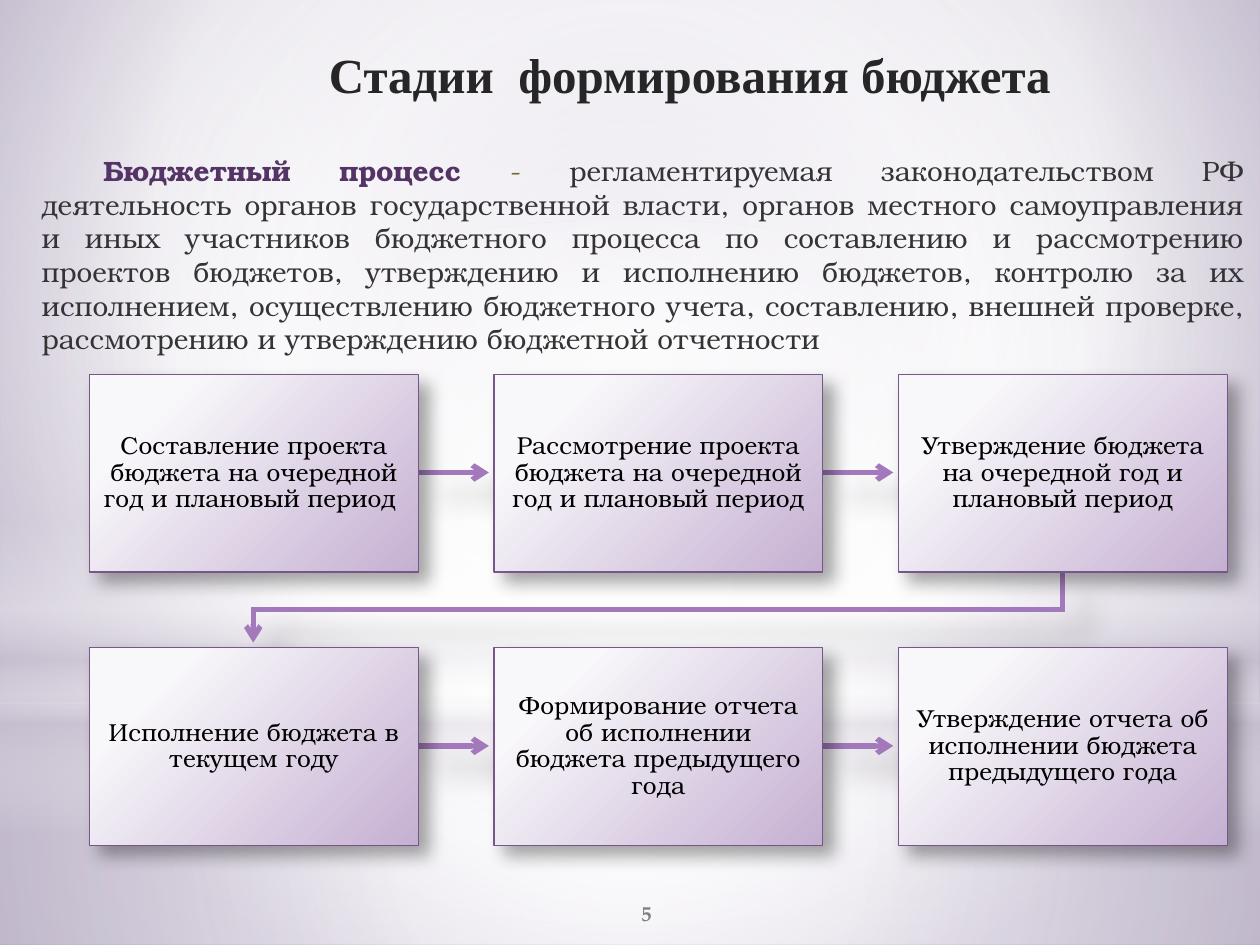
from dataclasses import dataclass

from lxml import etree
from pptx import Presentation
from pptx import util as u
from pptx.dml.color import RGBColor
from pptx.enum import shapes, text
from pptx.oxml import parse_xml
from pptx.oxml.ns import nsdecls, qn

PX = 914400 // 100  # 100 px to the inch
COLORS = {
    "title": "262626", "term": "543466", "dash": "756525", "body": "343436",
    "step": "000000", "number": "808080", "arrow": "A379BB", "border": "77568A",
    "shadow": "000000", "white": "FFFFFF", "mist": "C9C2D1",
    "edge": "C1B7CD", "depth": "A191B5", "light": "F8F7FA", "lilac": "C5B0D2",
}
SERIF, BOOK, NUMBER = "Times New Roman", "TeX Gyre Bonum", "TeX Gyre Pagella"
CENTER = (50, 50, 50, 50)


@dataclass
class Box:
    left: int
    top: int
    width: int
    height: int

    def emu(self) -> list[int]:
        return [px(n) for n in (self.left, self.top, self.width, self.height)]


@dataclass
class Gradient:
    stops: list  # (position %, colour name, opacity %)
    focus: tuple | None = None  # circular when given, otherwise top to bottom


@dataclass
class Shadow:
    opacity: int
    blur: float
    distance: float


@dataclass
class Layer:
    preset: shapes.MSO_SHAPE
    box: Box
    gradient: Gradient


RECT, OVAL = shapes.MSO_SHAPE.RECTANGLE, shapes.MSO_SHAPE.OVAL
BACKGROUND = Gradient([(0, "edge", 100), (60, "white", 100), (100, "depth", 100)],
                      (20, 10, 20, 60))
LAYERS = [
    Layer(RECT, Box(0, 558, 1000, 192), Gradient(
        [(0, "white", 91), (37, "white", 76), (100, "mist", 79)], CENTER)),
    Layer(RECT, Box(0, 0, 1000, 558), Gradient(
        [(0, "white", 89), (48, "white", 62), (100, "mist", 79)], CENTER)),
    Layer(RECT, Box(0, 412, 1000, 250), Gradient(
        [(0, "white", 0), (29, "white", 30), (45, "mist", 40),
         (55, "white", 26), (65, "mist", 60), (100, "white", 0)])),
    Layer(OVAL, Box(0, 175, 1000, 558), Gradient(
        [(0, "white", 100), (56, "white", 0)], CENTER)),
]
STEP_GRADIENT = Gradient([(20, "light", 100), (100, "lilac", 100)], (-15, -15, 115, 115))
STEP_SHADOW, ARROW_SHADOW = Shadow(35, 10.2, 8), Shadow(26, 15, 18)
STEPS = [
    "Составление проекта бюджета на очередной год и плановый период ",
    "Рассмотрение проекта бюджета на очередной год и плановый период",
    "Утверждение бюджета на очередной год и плановый период",
    "Исполнение бюджета в текущем году",
    "Формирование отчета об исполнении бюджета предыдущего года",
    "Утверждение отчета об исполнении бюджета предыдущего года",
]
COLUMNS, GAP = 3, 60
STEP = Box(71, 297, 261, 157)
DEFINITION = [
    ("Бюджетный процесс ", "term", True),
    ("- ", "dash", False),
    ("регламентируемая законодательством РФ деятельность органов государственной "
     "власти, органов местного самоуправления и иных участников бюджетного процесса "
     "по составлению и рассмотрению проектов бюджетов, утверждению и исполнению "
     "бюджетов, контролю за их исполнением, осуществлению бюджетного учета, "
     "составлению, внешней проверке, рассмотрению и утверждению бюджетной отчетности",
     "body", False),
]


def px(length: int) -> int:
    return length * PX


def rgb(name: str) -> RGBColor:
    return RGBColor.from_string(COLORS[name])


def set_gradient(fill, element, gradient: Gradient) -> None:
    stops = "".join(
        f'<a:gs pos="{position * 1000}"><a:srgbClr val="{COLORS[color]}">'
        f'<a:alpha val="{opacity * 1000}"/></a:srgbClr></a:gs>'
        for position, color, opacity in gradient.stops)
    direction = '<a:lin ang="5400000" scaled="0"/>'
    if gradient.focus:
        sides = " ".join(f'{side}="{n * 1000}"' for side, n in zip("ltrb", gradient.focus))
        direction = f'<a:path path="circle"><a:fillToRect {sides}/></a:path>'
    fill.solid()
    solid = next(element.iter(qn("a:solidFill")))
    solid.getparent().replace(solid, parse_xml(
        f'<a:gradFill {nsdecls("a")} rotWithShape="1"><a:gsLst>{stops}</a:gsLst>'
        f'{direction}</a:gradFill>'))


def set_shadow(shape, shadow: Shadow) -> None:
    properties = shape.element.spPr
    effects = properties.find(qn("a:effectLst"))
    if effects is None:
        effects = etree.SubElement(properties, qn("a:effectLst"))
    effects.append(parse_xml(
        f'<a:outerShdw {nsdecls("a")} blurRad="{u.Pt(shadow.blur)}" '
        f'dist="{u.Pt(shadow.distance)}" dir="2700000" algn="tl" rotWithShape="0">'
        f'<a:srgbClr val="{COLORS["shadow"]}"><a:alpha val="{shadow.opacity * 1000}"/>'
        '</a:srgbClr></a:outerShdw>'))


def style_run(run, font: str, size: int, color: str, bold: bool = False) -> None:
    run.font.name, run.font.size, run.font.bold = font, u.Pt(size), bold
    run.font.color.rgb = rgb(color)


def place(shape, box: Box) -> None:
    shape.left, shape.top, shape.width, shape.height = box.emu()


def write_line(shape, words: str, font: str, size: int, color: str, bold: bool = False):
    frame = shape.text_frame
    frame.text = words
    frame.word_wrap = True
    frame.vertical_anchor = text.MSO_ANCHOR.MIDDLE
    paragraph = frame.paragraphs[0]
    paragraph.alignment = text.PP_ALIGN.CENTER
    style_run(paragraph.runs[0], font, size, color, bold)
    return paragraph


def add_layer(slide, layer: Layer) -> None:
    shape = slide.shapes.add_shape(layer.preset, *layer.box.emu())
    shape.shadow.inherit = False
    shape.line.fill.background()
    set_gradient(shape.fill, shape.element, layer.gradient)


def add_step(slide, box: Box, words: str) -> None:
    shape = slide.shapes.add_shape(RECT, *box.emu())
    shape.shadow.inherit = False
    set_gradient(shape.fill, shape.element, STEP_GRADIENT)
    shape.line.color.rgb, shape.line.width = rgb("border"), u.Pt(0.75)
    set_shadow(shape, STEP_SHADOW)
    frame = shape.text_frame
    frame.margin_left = frame.margin_right = frame.margin_top = frame.margin_bottom = px(11)
    write_line(shape, words, BOOK, 14, "step").line_spacing = 0.9


def add_arrow(slide, points: list[tuple[int, int]]) -> None:
    if len(points) == 2:
        ends = [px(n) for point in points for n in point]
        arrow = slide.shapes.add_connector(shapes.MSO_CONNECTOR.STRAIGHT, *ends)
    else:
        builder = slide.shapes.build_freeform(*points[0], scale=PX)
        builder.add_line_segments(points[1:], close=False)
        arrow = builder.convert_to_shape()
        arrow.fill.background()
        arrow.shadow.inherit = False
    arrow.line.color.rgb, arrow.line.width = rgb("arrow"), u.Pt(3)
    line = arrow.element.spPr.find(qn("a:ln"))
    etree.SubElement(line, qn("a:miter"), lim="800000")
    etree.SubElement(line, qn("a:tailEnd"), type="arrow")
    set_shadow(arrow, ARROW_SHADOW)


def main() -> None:
    presentation = Presentation()
    presentation.slide_width, presentation.slide_height = px(1000), px(750)
    slide = presentation.slides.add_slide(presentation.slide_layouts[1])
    title, body = slide.placeholders

    # Backdrop, kept behind the placeholders
    set_gradient(slide.background.fill, slide.element, BACKGROUND)
    for layer in LAYERS:
        add_layer(slide, layer)
    for placeholder in (title, body):
        placeholder.element.getparent().append(placeholder.element)

    # Title and definition
    place(title, Box(201, 31, 693, 70))
    write_line(title, "Стадии  формирования бюджета", SERIF, 28, "title", True)
    title.text_frame.vertical_anchor = text.MSO_ANCHOR.TOP
    title.text_frame.margin_top = px(4)
    place(body, Box(23, 117, 977, 156))
    body.text_frame.margin_right = px(12)
    paragraph = body.text_frame.paragraphs[0]
    paragraph.alignment = text.PP_ALIGN.JUSTIFY
    paragraph.space_before, paragraph.space_after = u.Pt(3.2), u.Pt(3)
    for words, color, bold in DEFINITION:
        run = paragraph.add_run()
        run.text = words
        style_run(run, BOOK, 16, color, bold)
    properties = paragraph._p.get_or_add_pPr()
    properties.set("marL", "0")
    properties.set("indent", str(px(49)))
    etree.SubElement(properties, qn("a:buNone"))

    # Steps, each with the arrow to the next one
    boxes = [Box(STEP.left + i % COLUMNS * (STEP.width + GAP),
                 STEP.top + i // COLUMNS * (STEP.height + GAP), STEP.width, STEP.height)
             for i in range(len(STEPS))]
    for box, following, words in zip(boxes, boxes[1:] + [None], STEPS):
        if following and following.top == box.top:
            middle = box.top + box.height // 2
            add_arrow(slide, [(box.left + box.width, middle), (following.left - 4, middle)])
        elif following:
            start, end = (b.left + b.width // 2 for b in (box, following))
            bottom = box.top + box.height
            turn = bottom + GAP // 2
            add_arrow(slide, [(start, bottom), (start, turn), (end, turn),
                              (end, following.top - 4)])
        add_step(slide, box, words)

    # Page number
    number = slide.shapes.add_textbox(*Box(413, 705, 200, 40).emu())
    write_line(number, "5", NUMBER, 12, "number", True)

    presentation.save("out.pptx")


if __name__ == "__main__":
    main()
